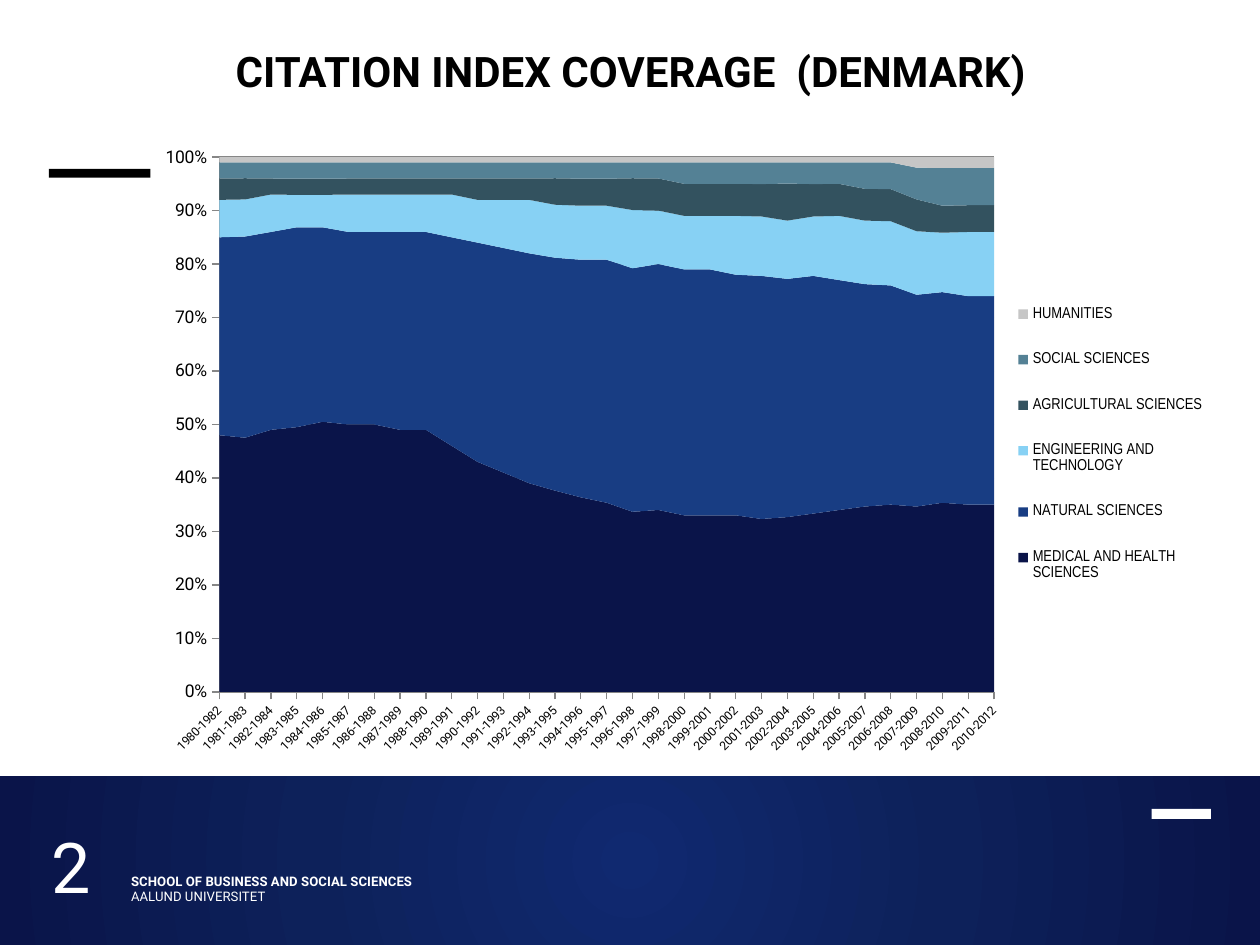
from dataclasses import dataclass

from pptx import Presentation
from pptx.chart.data import CategoryChartData
from pptx.dml.color import RGBColor
from pptx.enum.chart import XL_CHART_TYPE, XL_LEGEND_POSITION, XL_TICK_MARK
from pptx.enum.shapes import MSO_SHAPE
from pptx.enum.text import MSO_ANCHOR, PP_ALIGN
from pptx.oxml import parse_xml
from pptx.oxml.ns import nsdecls, qn
from pptx.util import Inches, Pt


@dataclass(frozen=True)
class Theme:
    font: str = "Roboto"
    narrow: str = "Arial Narrow"
    black: str = "000000"
    white: str = "FFFFFF"
    axis: str = "868686"
    glow: tuple = ((0, "102970"), (50, "0D215A"), (100, "0A1449"))
    title: float = 24
    page: float = 40
    foot: float = 7.5
    label: float = 10
    year: float = 7
    key: float = 9


FIELDS = (
    ("MEDICAL AND HEALTH SCIENCES", "0A1449",
     (48, 48, 49, 49, 50, 50, 50, 49, 49, 46, 43, 41, 39, 38, 36, 35,
      34, 34, 33, 33, 33, 32, 33, 33, 34, 35, 35, 35, 35, 35, 35)),
    ("NATURAL SCIENCES", "183D83",
     (37, 38, 37, 37, 36, 36, 36, 37, 37, 39, 41, 42, 43, 44, 44, 45,
      46, 46, 46, 46, 45, 45, 45, 44, 43, 42, 41, 40, 39, 39, 39)),
    ("ENGINEERING AND TECHNOLOGY", "87D1F4",
     (7, 7, 7, 6, 6, 7, 7, 7, 7, 8, 8, 9, 10, 10, 10, 10,
      11, 10, 10, 10, 11, 11, 11, 11, 12, 12, 12, 12, 11, 12, 12)),
    ("AGRICULTURAL SCIENCES", "33525F",
     (4, 4, 3, 3, 3, 3, 3, 3, 3, 3, 4, 4, 4, 5, 5, 5,
      6, 6, 6, 6, 6, 6, 7, 6, 6, 6, 6, 6, 5, 5, 5)),
    ("SOCIAL SCIENCES", "548195", (3,) * 18 + (4,) * 7 + (5, 5, 6, 7, 7, 7)),
    ("HUMANITIES", "C6C6C6", (1,) * 27 + (2,) * 4),
)
YEARS = [f"{year}-{year + 2}" for year in range(1980, 2011)]


def assign(target, values):
    for name, value in values.items():
        setattr(target, name, value)


def place(node, box, frame, inner=False):
    """Fix a chart part at a box of the slide's grid, within the chart's frame."""
    for old in node.findall(qn("c:layout")):
        node.remove(old)
    left, top, width, height = frame
    shares = ((box[0] - left) / width, (box[1] - top) / height,
              box[2] / width, box[3] / height)
    marks = '<c:layoutTarget val="inner"/>' if inner else ""
    marks += "".join(f'<c:{side}Mode val="edge"/>' for side in "xy")
    marks += "".join(f'<c:{side} val="{share}"/>' for side, share in zip("xywh", shares))
    layout = parse_xml(f'<c:layout {nsdecls("c")}><c:manualLayout>{marks}'
                       '</c:manualLayout></c:layout>')
    node.insert(0 if inner else 1, layout)


class Deck:
    """Draws on one slide, with a grid of 100 columns and 75 rows."""

    def __init__(self, theme):
        self.theme = theme
        self.file = Presentation()
        assign(self.file, {"slide_width": Inches(10), "slide_height": Inches(7.5)})
        self.slide = self.file.slides.add_slide(self.file.slide_layouts[6])

    def cells(self, box):
        units = (self.file.slide_width / 100, self.file.slide_height / 75) * 2
        return [round(size * unit) for size, unit in zip(box, units)]

    def style(self, font, size, color=None, name=None, bold=False):
        assign(font, {"size": Pt(size), "name": name or self.theme.font, "bold": bold})
        font.color.rgb = RGBColor.from_string(color or self.theme.black)

    def bar(self, box, color):
        shape = self.slide.shapes.add_shape(MSO_SHAPE.RECTANGLE, *self.cells(box))
        shape.shadow.inherit = False
        shape.line.fill.background()
        shape.fill.solid()
        shape.fill.fore_color.rgb = RGBColor.from_string(color)
        return shape

    def band(self, box, stops):
        """Add a bar with a round gradient."""
        shape = self.bar(box, stops[0][1])
        marks = "".join(f'<a:gs pos="{pos * 1000}"><a:srgbClr val="{color}"/></a:gs>'
                        for pos, color in stops)
        fill = parse_xml(
            f'<a:gradFill {nsdecls("a")} rotWithShape="1"><a:gsLst>{marks}</a:gsLst>'
            '<a:path path="circle"><a:fillToRect l="50000" t="50000" r="50000" '
            'b="50000"/></a:path></a:gradFill>')
        props = shape._element.spPr
        props.replace(props.find(qn("a:solidFill")), fill)

    def text(self, box, lines, size, color, align=PP_ALIGN.LEFT, space=None, low=0):
        """Add lines, each a (words, bold) pair, that rest on the box's foot."""
        frame = self.slide.shapes.add_textbox(*self.cells(box)).text_frame
        assign(frame, {"word_wrap": True, "vertical_anchor": MSO_ANCHOR.BOTTOM,
                       "margin_left": 0, "margin_top": 0, "margin_right": 0,
                       "margin_bottom": Inches(low)})
        para = frame.paragraphs[0]
        assign(para, {"alignment": align, "line_spacing": space})
        for row, (words, bold) in enumerate(lines):
            if row:
                para.add_line_break()
            run = para.add_run()
            run.text = words
            self.style(run.font, size, color, bold=bold)

    def axis(self, axis, size):
        assign(axis, {"major_tick_mark": XL_TICK_MARK.OUTSIDE,
                      "minor_tick_mark": XL_TICK_MARK.NONE})
        self.style(axis.tick_labels.font, size)
        self.line(axis.format.line)

    def line(self, line):
        line.color.rgb = RGBColor.from_string(self.theme.axis)
        line.width = Pt(0.75)

    def areas(self, box, inner, key, years, fields):
        data = CategoryChartData(number_format="0")
        data.categories = years
        for name, _, values in fields:
            data.add_series(name, values)
        chart = self.slide.shapes.add_chart(
            XL_CHART_TYPE.AREA_STACKED_100, *self.cells(box), data).chart
        assign(chart, {"has_title": False, "has_legend": True})
        self.style(chart.font, self.theme.label)
        plot = chart.plots[0]
        plot.vary_by_categories = False
        for series, (_, color, _) in zip(plot.series, fields):
            series.format.fill.solid()
            series.format.fill.fore_color.rgb = RGBColor.from_string(color)
            series.format.line.fill.background()

        years_axis, shares = chart.category_axis, chart.value_axis
        self.axis(years_axis, self.theme.year)
        years_axis._element.find(qn("c:txPr")).find(qn("a:bodyPr")).set("rot", "-2700000")
        self.axis(shares, self.theme.label)
        assign(shares, {"minimum_scale": 0, "maximum_scale": 1, "major_unit": 0.1,
                        "has_major_gridlines": True})
        self.line(shares.major_gridlines.format.line)
        assign(shares.tick_labels, {"number_format": "0%",
                                    "number_format_is_linked": False})
        shares._element.find(qn("c:crossBetween")).set("val", "midCat")

        legend = chart.legend
        assign(legend, {"position": XL_LEGEND_POSITION.RIGHT, "include_in_layout": False})
        self.style(legend.font, self.theme.key, name=self.theme.narrow)
        place(plot._element.getparent(), inner, box, inner=True)
        place(legend._element, key, box)


def main():
    theme = Theme()
    deck = Deck(theme)
    deck.band((0, 61.6, 100, 13.4), theme.glow)
    deck.bar((91.4, 64.2, 4.7, 0.8), theme.white)
    deck.text((10.4, 63, 39.4, 9),
              [("SCHOOL OF BUSINESS AND SOCIAL SCIENCES", True),
               ("AALUND UNIVERSITET", False)],
              theme.foot, theme.white, space=Pt(9.1), low=0.02)
    deck.text((4.1, 63, 5.5, 9), [("2", False)], theme.page, theme.white)
    deck.bar((3.88, 13.4, 8.05, 0.7), theme.black)
    deck.text((3.9, 1.2, 92.3, 6.4), [("CITATION INDEX COVERAGE  (DENMARK)", True)],
              theme.title, theme.black, align=PP_ALIGN.CENTER, space=0.83)
    deck.areas((11.4, 10.7, 85.8, 50.1), (17.4, 12.47, 61.5, 42.45),
               (79.97, 21.95, 16.3, 26.55), YEARS, FIELDS)
    deck.file.save("out.pptx")


if __name__ == "__main__":
    main()
